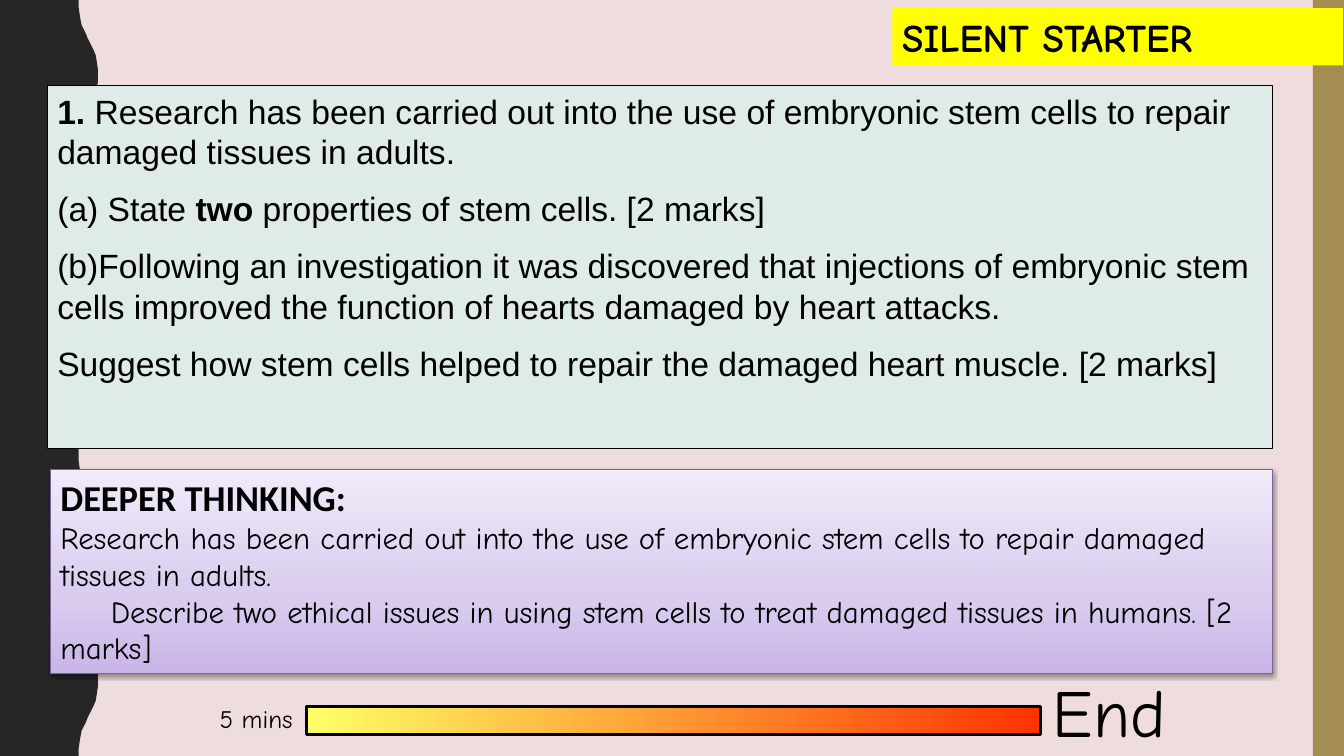
from dataclasses import dataclass

import lxml.etree
import pptx
import pptx.dml.color
import pptx.enum.shapes
import pptx.oxml.ns
import pptx.util

Inches = pptx.util.Inches
Pt = pptx.util.Pt
qn = pptx.oxml.ns.qn

COLORS = {
    "back": "EEDDDC", "wave": "262626", "edge": "A38D51",
    "task": "DEEBE8", "title": "FFFF00", "ink": "000000",
    "deep": "C9B5E8", "mid": "D8CBEE", "pale": "F0EAF9", "rim": "7D60A0",
    "start": "FFFF66", "stop": "FF3300",
}


@dataclass(frozen=True)
class Para:
    runs: tuple[tuple[str, bool], ...]
    size: int
    face: str
    space: int = 0
    margin: float = 0
    indent: float = 0
    number: str = ""


@dataclass(frozen=True)
class Box:
    left: float
    top: float
    width: float
    height: float
    fill: str = ""
    stops: tuple[tuple[int, str], ...] = ()
    angle: int = 0
    line: str = ""
    weight: float = 0
    shade: bool = False
    wrap: bool = True
    paras: tuple[Para, ...] = ()


def task(*runs: tuple[str, bool], **rest) -> Para:
    return Para(runs, 24, "Arial", 12, **rest)


def note(text: str, size: int, bold: bool = False, indent: float = 0) -> Para:
    return Para(((text, bold),), size, "Comic Neue", indent=indent)


BAR = (3.04, 7.01, 7.28, 0.28)
BOXES = (
    Box(13.02, 0, 0.31, 7.5, fill="edge"),
    Box(0.47, 0.85, 12.15, 3.6, fill="task", line="ink", weight=0.75, paras=(
        task(("1. ", True), ("Research has been carried out into the use of embryonic stem cells "
                             "to repair damaged tissues in adults.", False)),
        task(("State ", False), ("two", True), (" properties of stem cells. [2 marks]", False),
             margin=0.5, indent=-0.5, number="alphaLcParenBoth"),
        task(("(b)Following an investigation it was discovered that injections of embryonic "
              "stem cells improved the function of hearts damaged by heart attacks.", False)),
        task(("Suggest how stem cells helped to repair the damaged heart muscle. [2 marks]", False)),
    )),
    Box(0.5, 4.66, 12.12, 2.02, stops=((0, "deep"), (35, "mid"), (100, "pale")), angle=90,
        line="rim", weight=0.75, shade=True, paras=(
            Para((("DEEPER THINKING:", True),), 26, "Calibri"),
            note("Research has been carried out into the use of embryonic stem cells "
                 "to repair damaged tissues in adults.", 22),
            note("Describe two ethical issues in using stem cells to treat damaged tissues "
                 "in humans. [2 marks]", 22, indent=0.5),
        )),
    Box(8.85, 0.08, 4.47, 0.57, fill="title", paras=(note("SILENT STARTER", 28, True),)),
    Box(*BAR, stops=((0, "start"), (100, "stop"))),
    Box(*BAR, line="ink", weight=2.25),
    Box(10.34, 6.6, 1.39, 0.9, wrap=False, paras=(note("End", 48),)),
    Box(2.08, 6.93, 0.95, 0.4, wrap=False, paras=(note("5 mins", 18),)),
)

PERIOD = 1.5
CURVE = (
    (0, 0.78), (0.07, 0.78), (0.14, 0.79), (0.2, 0.8), (0.25, 0.81),
    (0.29, 0.83), (0.33, 0.85), (0.38, 0.87), (0.42, 0.89), (0.46, 0.91),
    (0.5, 0.93), (0.55, 0.95), (0.61, 0.96), (0.68, 0.97), (0.75, 0.97),
)


def tint(name: str) -> pptx.dml.color.RGBColor:
    return pptx.dml.color.RGBColor.from_string(COLORS[name])


def add_wave(slide) -> None:
    cycle = CURVE + tuple((PERIOD - y, x) for y, x in CURVE[-2:0:-1])
    edge = [(Inches(x), Inches(turn * PERIOD + y)) for turn in range(5) for y, x in cycle]
    edge += [(Inches(CURVE[0][1]), Inches(7.5)), (0, Inches(7.5))]
    path = slide.shapes.build_freeform(0, 0, scale=1.0)
    path.add_line_segments(edge, close=True)
    wave = path.convert_to_shape()
    wave.shadow.inherit = False
    wave.fill.solid()
    wave.fill.fore_color.rgb = tint("wave")
    wave.line.fill.background()


def blend(shape, box: Box) -> None:
    shape.fill.gradient()
    shape.fill.gradient_angle = box.angle
    group = next(shape.element.iter(qn("a:gsLst")))
    group.clear()
    for place, name in box.stops:
        stop = lxml.etree.SubElement(group, qn("a:gs"), pos=str(place * 1000))
        lxml.etree.SubElement(stop, qn("a:srgbClr"), val=COLORS[name])


def shade(shape) -> None:
    group = next(shape.element.iter(qn("a:effectLst")))
    cast = lxml.etree.SubElement(
        group, qn("a:outerShdw"), blurRad=str(Pt(3.1)), dist=str(Pt(1.6)),
        dir="5400000", rotWithShape="0")
    color = lxml.etree.SubElement(cast, qn("a:srgbClr"), val=COLORS["ink"])
    lxml.etree.SubElement(color, qn("a:alpha"), val="38000")


def write(frame, paras: tuple[Para, ...]) -> None:
    for index, item in enumerate(paras):
        para = frame.add_paragraph() if index else frame.paragraphs[0]
        para.alignment = pptx.enum.text.PP_ALIGN.LEFT
        para.space_before = Pt(item.space)
        font = para.font
        font.size, font.name = Pt(item.size), item.face
        font.color.rgb = tint("ink")
        bolds = {bold for _, bold in item.runs}
        if len(bolds) == 1:
            font.bold = item.runs[0][1]
        for text, bold in item.runs:
            run = para.add_run()
            run.text = text
            if len(bolds) > 1:
                run.font.bold = bold
        props = para._p.get_or_add_pPr()
        props.set("marL", str(Inches(item.margin)))
        props.set("indent", str(Inches(item.indent)))
        if item.number:
            mark = lxml.etree.Element(qn("a:buAutoNum"), type=item.number)
            props.find(qn("a:defRPr")).addprevious(mark)


def add_box(slide, box: Box) -> None:
    place = [Inches(part) for part in (box.left, box.top, box.width, box.height)]
    if box.fill or box.stops or box.line:
        shape = slide.shapes.add_shape(pptx.enum.shapes.MSO_SHAPE.RECTANGLE, *place)
        shape.shadow.inherit = False
        if box.stops:
            blend(shape, box)
        elif box.fill:
            shape.fill.solid()
            shape.fill.fore_color.rgb = tint(box.fill)
        else:
            shape.fill.background()
        if box.line:
            shape.line.color.rgb = tint(box.line)
            shape.line.width = Pt(box.weight)
        else:
            shape.line.fill.background()
        if box.shade:
            shade(shape)
    else:
        shape = slide.shapes.add_textbox(*place)
    if box.paras:
        frame = shape.text_frame
        frame.word_wrap = box.wrap
        frame.vertical_anchor = pptx.enum.text.MSO_ANCHOR.TOP
        write(frame, box.paras)


def main() -> None:
    deck = pptx.Presentation()
    deck.slide_width, deck.slide_height = Inches(13.33), Inches(7.5)
    slide = deck.slides.add_slide(deck.slide_layouts[6])
    slide.background.fill.solid()
    slide.background.fill.fore_color.rgb = tint("back")
    add_wave(slide)
    for box in BOXES:
        add_box(slide, box)
    deck.save("out.pptx")


if __name__ == "__main__":
    main()
